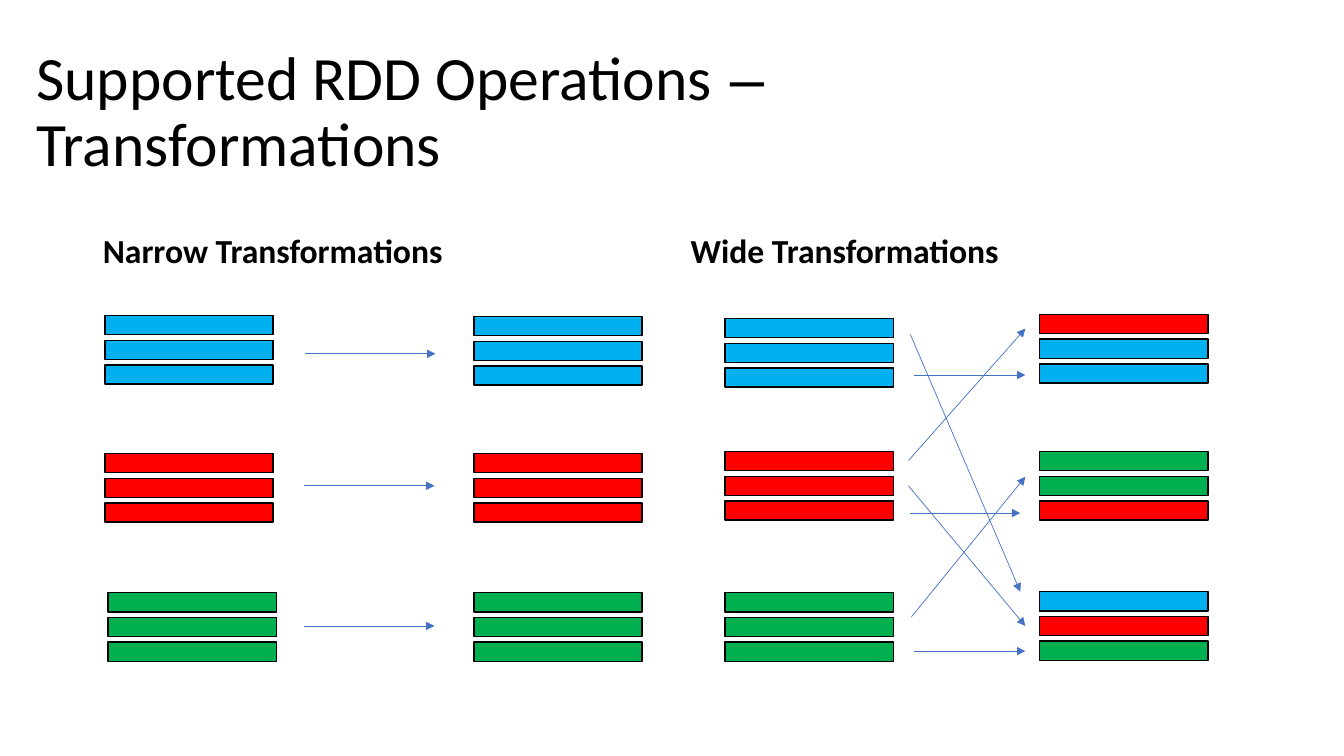
from dataclasses import dataclass

from lxml.etree import SubElement
from pptx import Presentation
from pptx.dml.color import RGBColor
from pptx.enum.shapes import MSO_CONNECTOR as Connector, MSO_SHAPE as Shape
from pptx.enum.text import MSO_ANCHOR as Anchor, PP_ALIGN as Align
from pptx.oxml.ns import qn
from pptx.slide import Slide
from pptx.util import Inches, Pt

COLORS = {
    "blue": "00B0F0",
    "red": "FF0000",
    "green": "00B050",
    "black": "000000",
    "arrow": "4472C4",
}
BAR_WIDTH, BAR_HEIGHT, BAR_STEP = 1.67, 0.19, 0.245


@dataclass(frozen=True)
class Heading:
    """A placeholder with its place and its runs of (text, font)."""
    index: int
    left: float
    top: float
    width: float
    height: float
    runs: tuple[tuple[str, str], ...]
    size: int
    bold: bool
    space_before: int
    anchor: Anchor


@dataclass(frozen=True)
class Partition:
    """A stack of record bars, listed from the top."""
    left: float
    top: float
    bars: tuple[str, ...]


@dataclass(frozen=True)
class Arrow:
    start: tuple[float, float]
    end: tuple[float, float]


HEADINGS = [
    Heading(0, 0.26, 0.4, 12.16, 1.45,
            (("Supported RDD Operations", "Calibri"), (" – ", "Arial"),
             ("\n", ""), ("Transformations", "Calibri")),
            44, False, 0, Anchor.MIDDLE),
    Heading(1, 0.92, 1.84, 5.64, 0.9, (("Narrow Transformations", "Calibri"),),
            24, True, 10, Anchor.BOTTOM),
    Heading(3, 6.75, 1.84, 5.67, 0.9, (("Wide Transformations", "Calibri"),),
            24, True, 10, Anchor.BOTTOM),
]

BLUE, RED, GREEN = (("blue",) * 3, ("red",) * 3, ("green",) * 3)
PARTITIONS = [
    # Narrow: input, then output
    Partition(1.04, 3.13, BLUE),
    Partition(1.04, 4.5, RED),
    Partition(1.07, 5.88, GREEN),
    Partition(4.7, 3.14, BLUE),
    Partition(4.7, 4.5, RED),
    Partition(4.7, 5.88, GREEN),
    # Wide: input, then shuffled output
    Partition(7.19, 3.16, BLUE),
    Partition(7.19, 4.48, RED),
    Partition(7.19, 5.88, GREEN),
    Partition(10.31, 3.12, ("red", "blue", "blue")),
    Partition(10.31, 4.48, ("green", "green", "red")),
    Partition(10.31, 5.87, ("blue", "red", "green")),
]

ARROWS = [
    # Narrow: one to one
    Arrow((3.03, 3.51), (4.32, 3.51)),
    Arrow((3.02, 4.82), (4.31, 4.82)),
    Arrow((3.02, 6.21), (4.31, 6.21)),
    # Wide: shuffle
    Arrow((9.03, 3.32), (10.12, 5.87)),
    Arrow((9.01, 4.57), (10.17, 3.26)),
    Arrow((9.03, 5.09), (10.12, 5.09)),
    Arrow((9.07, 6.46), (10.17, 6.46)),
    Arrow((9.07, 3.72), (10.17, 3.72)),
    Arrow((9.01, 4.82), (10.17, 6.21)),
    Arrow((9.04, 6.12), (10.17, 4.73)),
]


def color(name: str) -> RGBColor:
    return RGBColor.from_string(COLORS[name])


def fill_heading(slide: Slide, heading: Heading) -> None:
    placeholder = next(shape for shape in slide.placeholders
                       if shape.placeholder_format.idx == heading.index)
    placeholder.left, placeholder.top = Inches(heading.left), Inches(heading.top)
    placeholder.width, placeholder.height = Inches(heading.width), Inches(heading.height)
    text_frame = placeholder.text_frame
    text_frame.vertical_anchor = heading.anchor
    paragraph = text_frame.paragraphs[0]
    paragraph.alignment = Align.LEFT
    paragraph.line_spacing = 0.9
    paragraph.space_before = Pt(heading.space_before)
    for text, font_name in heading.runs:
        if text == "\n":
            paragraph.add_line_break()
            continue
        run = paragraph.add_run()
        run.text = text
        run.font.name = font_name
        run.font.size = Pt(heading.size)
        run.font.bold = heading.bold
        run.font.color.rgb = color("black")


def draw_partition(slide: Slide, partition: Partition) -> None:
    group = slide.shapes.add_group_shape()
    for row, bar_color in enumerate(partition.bars):
        bar = group.shapes.add_shape(
            Shape.RECTANGLE, Inches(partition.left),
            Inches(partition.top + row * BAR_STEP),
            Inches(BAR_WIDTH), Inches(BAR_HEIGHT))
        bar.shadow.inherit = False
        bar.fill.solid()
        bar.fill.fore_color.rgb = color(bar_color)
        bar.line.color.rgb = color("black")
        bar.line.width = Pt(1)


def draw_arrow(slide: Slide, arrow: Arrow) -> None:
    points = [Inches(value) for value in arrow.start + arrow.end]
    connector = slide.shapes.add_connector(Connector.STRAIGHT, *points)
    connector.line.color.rgb = color("arrow")
    connector.line.width = Pt(0.5)
    properties = connector._element.spPr
    SubElement(properties.find(qn("a:ln")), qn("a:tailEnd"), type="triangle")
    SubElement(properties, qn("a:effectLst"))


def main() -> None:
    presentation = Presentation()
    presentation.slide_width, presentation.slide_height = Inches(13.33), Inches(7.5)
    comparison_layout = presentation.slide_layouts[4]
    slide = presentation.slides.add_slide(comparison_layout)

    # Title and column headings
    for heading in HEADINGS:
        fill_heading(slide, heading)
    for placeholder in list(slide.placeholders):
        if not placeholder.text_frame.text:
            placeholder._element.getparent().remove(placeholder._element)

    # Partitions and data flow
    for partition in PARTITIONS:
        draw_partition(slide, partition)
    for arrow in ARROWS:
        draw_arrow(slide, arrow)

    presentation.save("out.pptx")


if __name__ == "__main__":
    main()
